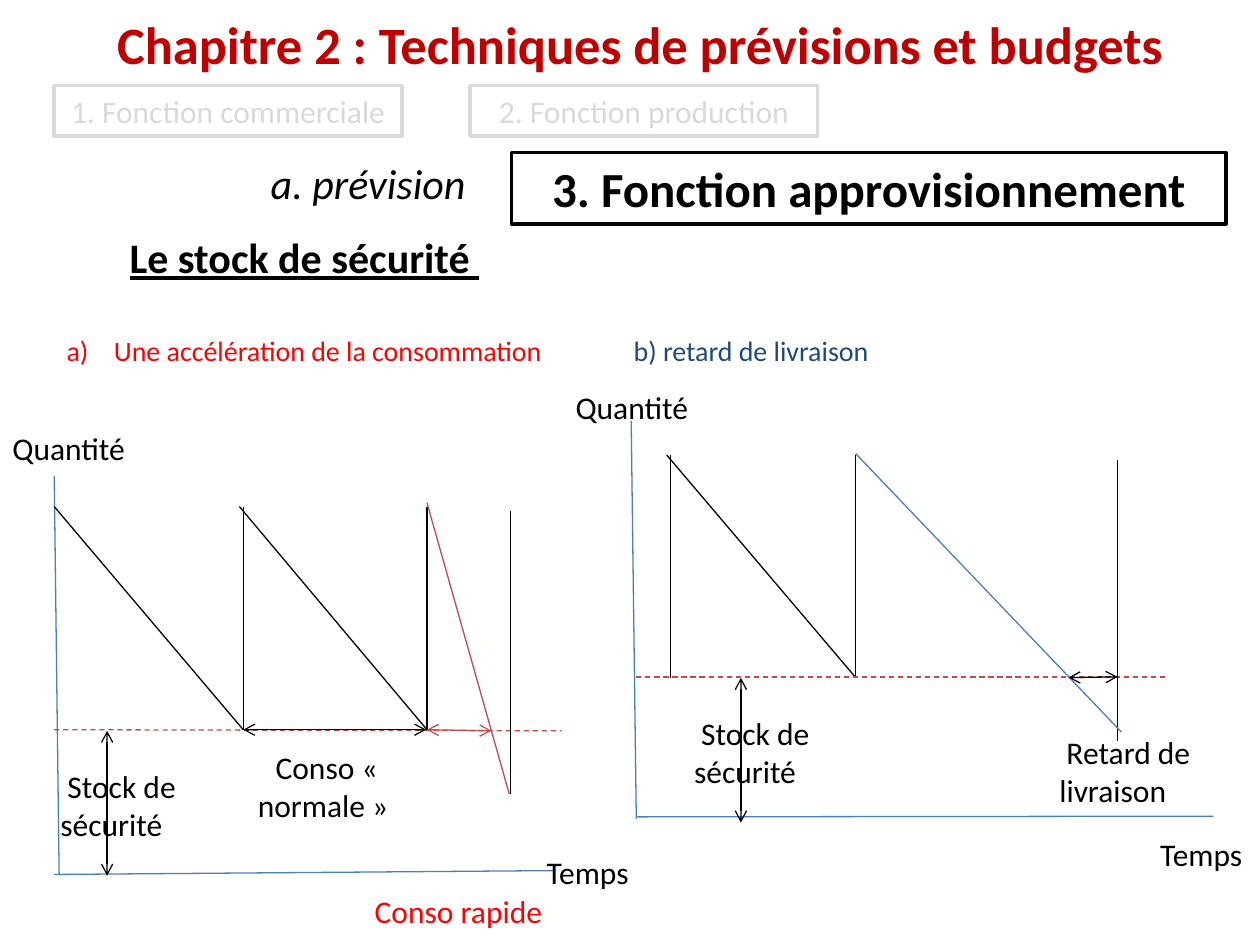
from lxml.etree import SubElement
from pptx import Presentation
from pptx.dml.color import RGBColor
from pptx.enum.dml import MSO_LINE
from pptx.enum.shapes import MSO_CONNECTOR, MSO_SHAPE
from pptx.enum.text import MSO_ANCHOR, PP_ALIGN
from pptx.oxml.ns import qn
from pptx.util import Pt

THEME = {
    "font": "Calibri",
    "black": "000000", "white": "FFFFFF", "title": "C00000", "faded": "D9D9D9",
    "red": "FF0000", "navy": "1F497D", "blue": "4B7EBC", "brick": "BF4C48",
    "title_size": 30, "current_size": 28, "heading_size": 24,
    "label_size": 18, "case_size": 16,
    "line": 0.75, "border": 2,
}

# Line role: colour, dashed, arrows at both ends
ROLES = {
    "axis": ("blue", False, False),
    "stock": ("black", False, False),
    "fast": ("brick", False, False),
    "late": ("blue", False, False),
    "safety": ("brick", True, False),
    "span": ("black", False, True),
    "fast span": ("brick", False, True),
}

# Text, place, size, colour
TABS = [
    ("3. Fonction approvisionnement", (292.3, 87.1, 408.2, 41), "current_size", "black"),
    ("1. Fonction commerciale", (31, 49, 198.7, 28.8), "label_size", "faded"),
    ("2. Fonction production", (268.6, 49, 198.7, 28.8), "label_size", "faded"),
]

TITLE = ("Chapitre 2 : Techniques de prévisions et budgets", (59.8, 3.6, 629.3, 43.9))
STEP = ("a. prévision", (147.6, 86.4, 144.7, 36))
HEADING = "Le stock de sécurité "
CASES = [("Une accélération de la consommation\t\t", "red"),
         ("b) retard de livraison", "navy")]
BODY_PLACE = (31, 128.9, 652.3, 128.2)

# Label, place, colour, alignment
LABELS = [
    ("Temps", (305.3, 483.8, 85, 28.8), "black", PP_ALIGN.LEFT),
    (" Conso « normale »", (127.4, 424.1, 114.5, 51.1), "black", PP_ALIGN.CENTER),
    (" Conso rapide", (203, 506.2, 118.1, 28.8), "red", PP_ALIGN.LEFT),
    ("Quantité", (0, 241.9, 85, 28.8), "black", PP_ALIGN.LEFT),
    (" Stock de sécurité", (27.4, 434.9, 85, 51.1), "black", PP_ALIGN.LEFT),
    ("Temps", (655.9, 473.8, 85, 28.8), "black", PP_ALIGN.LEFT),
    (" Stock de sécurité", (389.5, 404.6, 85, 51.1), "black", PP_ALIGN.LEFT),
    (" Retard de livraison", (598.3, 415.4, 118.1, 51.1), "black", PP_ALIGN.LEFT),
    ("Quantité", (321.8, 218.2, 85, 28.8), "black", PP_ALIGN.LEFT),
]

# Role, start x and y, end x and y
FAST_CONSUMPTION = [
    ("axis", 31, 272, 33.8, 499.7),
    ("axis", 317.5, 497.5, 31, 499.7),
    ("stock", 31, 289.5, 139, 417),
    ("stock", 139, 289.5, 139, 417),
    ("stock", 136.8, 289.5, 244, 417),
    ("stock", 244, 289.5, 244, 417),
    ("safety", 31, 417, 321, 417.6),
    ("fast", 244, 287.3, 291, 453.6),
    ("stock", 291.6, 292.3, 291.6, 453.6),
    ("span", 139, 417, 243.5, 417),
    ("fast span", 244, 417, 280.8, 417.6),
    ("span", 61.2, 500.4, 61.2, 417.6),
]
LATE_DELIVERY = [
    ("axis", 360.7, 240.5, 363.6, 468),
    ("axis", 693.4, 466.4, 364.3, 466.8),
    ("stock", 383, 260, 383, 387.2),
    ("stock", 381, 260, 489, 387.2),
    ("stock", 489, 260, 489, 387.2),
    ("safety", 363.6, 386.8, 667.4, 386.8),
    ("span", 423.4, 470, 423.4, 387.4),
    ("stock", 638.6, 262.8, 638.6, 423.4),
    ("late", 489, 259.2, 640.8, 418.3),
    ("span", 610.6, 387.2, 638.6, 386.8),
]


def rgb(name):
    return RGBColor.from_string(THEME[name])


def add_run(paragraph, text, size, color, **style):
    run = paragraph.add_run()
    run.text = text
    run.font.name = THEME["font"]
    run.font.size = Pt(THEME[size])
    run.font.color.rgb = rgb(color)
    for attribute, value in style.items():
        setattr(run.font, attribute, value)


def add_text_frame(slide, place):
    frame = slide.shapes.add_textbox(*map(Pt, place)).text_frame
    frame.word_wrap = True
    return frame


def add_label(slide, text, place, size, color, align=PP_ALIGN.LEFT, **style):
    paragraph = add_text_frame(slide, place).paragraphs[0]
    paragraph.alignment = align
    add_run(paragraph, text, size, color, **style)


def add_tab(slide, text, place, size, color):
    tab = slide.shapes.add_shape(MSO_SHAPE.RECTANGLE, *map(Pt, place))
    tab.shadow.inherit = False
    tab.fill.solid()
    tab.fill.fore_color.rgb = rgb("white")
    tab.line.color.rgb = rgb(color)
    tab.line.width = Pt(THEME["border"])
    frame = tab.text_frame
    frame.word_wrap = True
    frame.vertical_anchor = MSO_ANCHOR.TOP
    frame.paragraphs[0].alignment = PP_ALIGN.CENTER
    add_run(frame.paragraphs[0], text, size, color, bold=size == "current_size")


def add_body(slide):
    """Underlined heading, then both cases on one lettered, tabbed line."""
    frame = add_text_frame(slide, BODY_PLACE)
    heading = frame.paragraphs[0]
    heading._p.get_or_add_pPr().set("marL", str(Pt(36)))
    add_run(heading, HEADING, "heading_size", "black", bold=True, underline=True)
    cases = frame.add_paragraph()
    cases.space_before = Pt(29.3)
    properties = cases._p.get_or_add_pPr()
    properties.set("marL", str(Pt(27)))
    properties.set("indent", str(-Pt(27)))
    SubElement(properties, qn("a:buFont"), typeface=THEME["font"])
    SubElement(properties, qn("a:buAutoNum"), type="alphaLcParenR")
    for text, color in CASES:
        add_run(cases, text, "case_size", color)


def add_line(slide, role, *ends):
    color, dashed, arrows = ROLES[role]
    connector = slide.shapes.add_connector(MSO_CONNECTOR.STRAIGHT, *map(Pt, ends))
    connector.line.color.rgb = rgb(color)
    connector.line.width = Pt(THEME["line"])
    if dashed:
        connector.line.dash_style = MSO_LINE.DASH
    if arrows:
        outline = connector.line._get_or_add_ln()
        for end in ("a:headEnd", "a:tailEnd"):
            SubElement(outline, qn(end), type="arrow")
    SubElement(connector._element.spPr, qn("a:effectLst"))


def main():
    deck = Presentation()
    deck.slide_width, deck.slide_height = Pt(720), Pt(540)
    slide = deck.slides.add_slide(deck.slide_layouts[6])
    add_label(slide, *TITLE, "title_size", "title", bold=True)
    for tab in TABS:
        add_tab(slide, *tab)
    add_label(slide, *STEP, "heading_size", "black", italic=True)
    add_body(slide)
    for line in FAST_CONSUMPTION + LATE_DELIVERY:
        add_line(slide, *line)
    for text, place, color, align in LABELS:
        add_label(slide, text, place, "label_size", color, align)
    deck.save("out.pptx")


if __name__ == "__main__":
    main()
